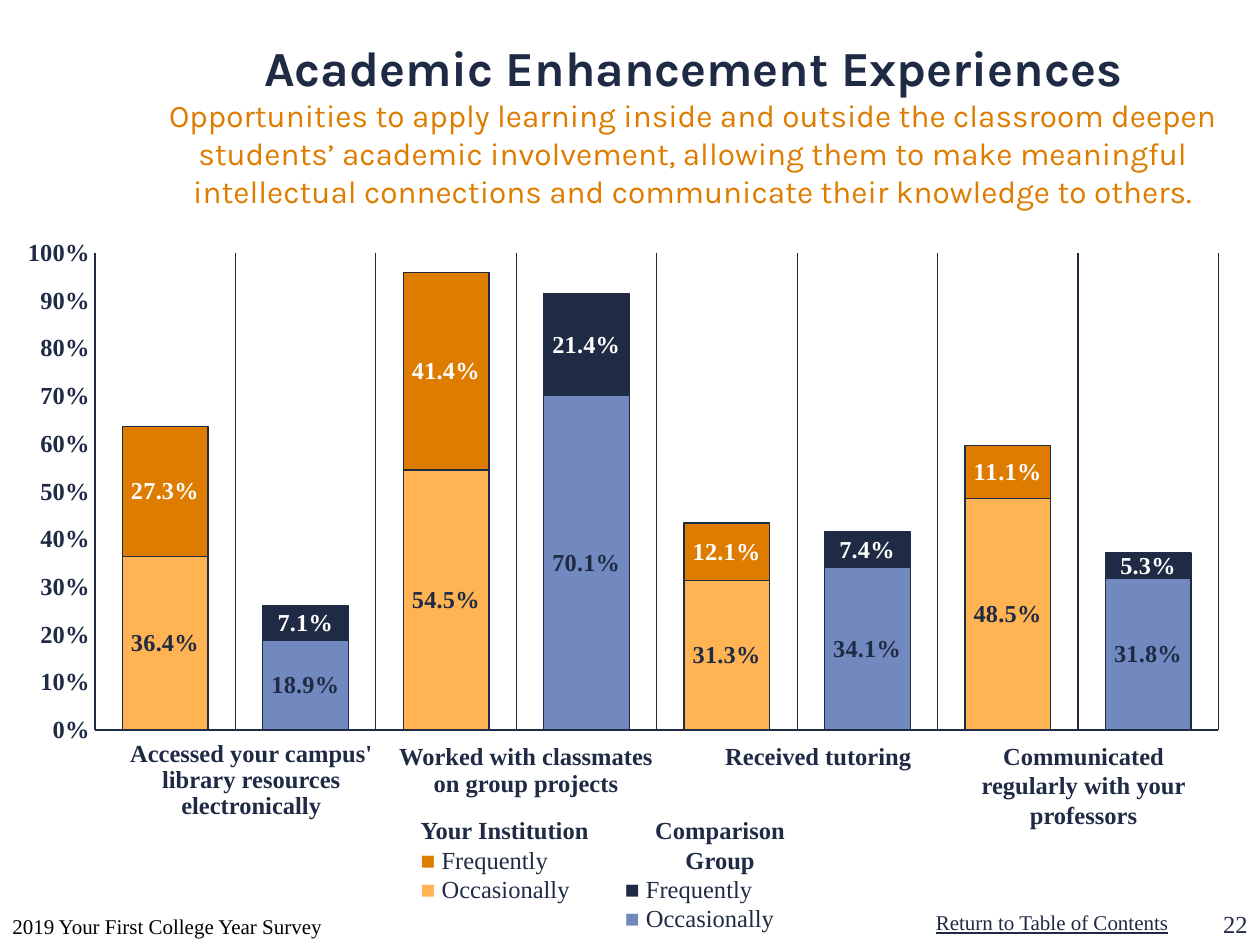
import pptx
import pptx.util
import pptx.chart.data
import pptx.dml.color
import pptx.enum.chart
import pptx.enum.text
import pptx.oxml

# Content
TITLE = "Academic Enhancement Experiences"
LEAD = ("Opportunities to apply learning inside and outside the classroom deepen "
        "students’ academic involvement, allowing them to make meaningful "
        "intellectual connections and communicate their knowledge to others.")
# Each row: occasionally and frequently, in stacking order
SERIES = [
    ("Occasionally", [0.364, 0.189, 0.545, 0.701, 0.313, 0.341, 0.485, 0.318],
     ("amber", "blue"), "navy"),
    ("Frequently", [0.273, 0.071, 0.414, 0.214, 0.121, 0.074, 0.111, 0.053],
     ("orange", "navy"), "white"),
]
# Boxes are left, top, width, height in percent of the slide
TOPICS = [
    ("Accessed your campus' library resources electronically",
     (8.3, 77.73, 23.3, 9.73), 15),
    ("Worked with classmates on group projects", (30.1, 78.13, 23.3, 6.93), 15),
    ("Received tutoring", (55.8, 77.73, 18.3, 4.53), None),
    ("Communicated regularly with your professors",
     (75.1, 77.73, 21.8, 10.8), None),
]
KEYS = [
    ("Your Institution", (32.4, 85.6, 17.3, 13.87), "left", 0.1),
    ("Comparison Group", (48.1, 85.6, 18.1, 13.87), "center", 0.15),
]

THEME = {
    "navy": "1F2A44", "orange": "DE7C00", "amber": "FFB352", "blue": "7289BF",
    "white": "FFFFFF", "black": "000000",
    "head": "Karla", "body": "Times New Roman",
    "title": 28, "lead": 18, "text": 14, "foot": 12, "label": 13.9,
}
ALIGN = {"left": pptx.enum.text.PP_ALIGN.LEFT,
         "center": pptx.enum.text.PP_ALIGN.CENTER,
         "right": pptx.enum.text.PP_ALIGN.RIGHT}

deck = pptx.Presentation()
deck.slide_width = pptx.util.Inches(10)
deck.slide_height = pptx.util.Inches(7.5)
slide = deck.slides.add_slide(deck.slide_layouts[6])


def color(name):
    return pptx.dml.color.RGBColor.from_string(THEME[name])


def place(box):
    sides = (deck.slide_width, deck.slide_height) * 2
    return [int(side * share / 100) for side, share in zip(sides, box)]


def style(font, size="text", ink="navy", bold=False, line=False, face="body"):
    font.name = THEME[face]
    font.size = pptx.util.Pt(THEME[size])
    font.bold = bold
    font.underline = line
    font.color.rgb = color(ink)


def write(text, box=None, frame=None, align="left", low=False, pad=0.1,
          lead=None, more=(), **form):
    """Add a paragraph to a new box or a given frame; more holds extra runs."""
    if frame is None:
        frame = slide.shapes.add_textbox(*place(box)).text_frame
        frame.word_wrap = True
        frame.margin_left = frame.margin_right = pptx.util.Inches(pad)
        if low:
            frame.vertical_anchor = pptx.enum.text.MSO_ANCHOR.BOTTOM
        para = frame.paragraphs[0]
    else:
        para = frame.add_paragraph()
    para.alignment = ALIGN[align]
    if lead:
        para.line_spacing = pptx.util.Pt(lead)
    for words, look in [(text, form), *more]:
        run = para.add_run()
        run.text = words
        style(run.font, **look)
    return frame


def edge(line, width):
    line.color.rgb = color("navy")
    line.width = pptx.util.Pt(width)


# Heading
head = write(TITLE, (10, 3.33, 90, 16.67), align="center",
             size="title", bold=True, face="head")
write(LEAD, frame=head, align="center", size="lead", ink="orange", face="head")

# Chart
data = pptx.chart.data.CategoryChartData(number_format="0.0%")
data.categories = [str(n + 1) for n in range(len(SERIES[0][1]))]
for name, vals, _, _ in SERIES:
    data.add_series(name, vals)
chart = slide.shapes.add_chart(
    pptx.enum.chart.XL_CHART_TYPE.COLUMN_STACKED,
    *place((2.2, 25.2, 94.7, 54.13)), data).chart
chart.has_legend = False
chart.has_title = False
style(chart.font)

none = pptx.enum.chart.XL_TICK_MARK.NONE
for axis in (chart.category_axis, chart.value_axis):
    axis.major_tick_mark = axis.minor_tick_mark = none
    edge(axis.format.line, 1)
cats, scale = chart.category_axis, chart.value_axis
cats.tick_label_position = pptx.enum.chart.XL_TICK_LABEL_POSITION.NONE
cats.has_major_gridlines = True
edge(cats.major_gridlines.format.line, 0.75)
scale.has_major_gridlines = False
scale.minimum_scale, scale.maximum_scale, scale.major_unit = 0, 1, 0.1
scale.tick_labels.number_format = "0%"
scale.tick_labels.number_format_is_linked = False
style(scale.tick_labels.font, bold=True)

# Columns alternate between the institution and its comparison group
plot = chart.plots[0]
plot.gap_width, plot.overlap = 64, 100
for bars, (_, vals, fills, ink) in zip(plot.series, SERIES):
    for n in range(len(vals)):
        look = bars.points[n].format
        look.fill.solid()
        look.fill.fore_color.rgb = color(fills[n % 2])
        edge(look.line, 0.75)
    tags = bars.data_labels
    tags.show_value = True
    tags.number_format = "0.0%"
    tags.number_format_is_linked = False
    tags.position = pptx.enum.chart.XL_LABEL_POSITION.CENTER
    style(tags.font, size="label", ink=ink, bold=True)

# Fixed inner plot area
area = chart._chartSpace.chart.plotArea
for old in area.findall(pptx.oxml.ns.qn("c:layout")):
    area.remove(old)
rules = [("layoutTarget", "inner"), ("xMode", "edge"), ("yMode", "edge"),
         ("x", 0.055), ("y", 0.029), ("w", 0.943), ("h", 0.933)]
area.insert(0, pptx.oxml.parse_xml(
    "<c:layout %s><c:manualLayout>%s</c:manualLayout></c:layout>" % (
        pptx.oxml.ns.nsdecls("c"),
        "".join('<c:%s val="%s"/>' % rule for rule in rules))))

# Topic labels under each pair of columns
for text, box, lead in TOPICS:
    write(text, box, align="center", lead=lead, bold=True)

# Colour keys
for n, (text, box, align, pad) in enumerate(KEYS):
    key = write(text, box, align=align, pad=pad, bold=True)
    for name, _, fills, _ in reversed(SERIES):
        write("■ ", frame=key, ink=fills[n], bold=True, more=[(name, {})])

# Footer
write("2019 Your First College Year Survey", (0, 93.33, 31.7, 6.67),
      low=True, size="foot", ink="black")
write("Return to Table of Contents", (73.3, 95.6, 20.7, 4),
      size="foot", line=True)
write("22", (95, 93.33, 5, 6.67), align="right", low=True)

deck.save("out.pptx")
